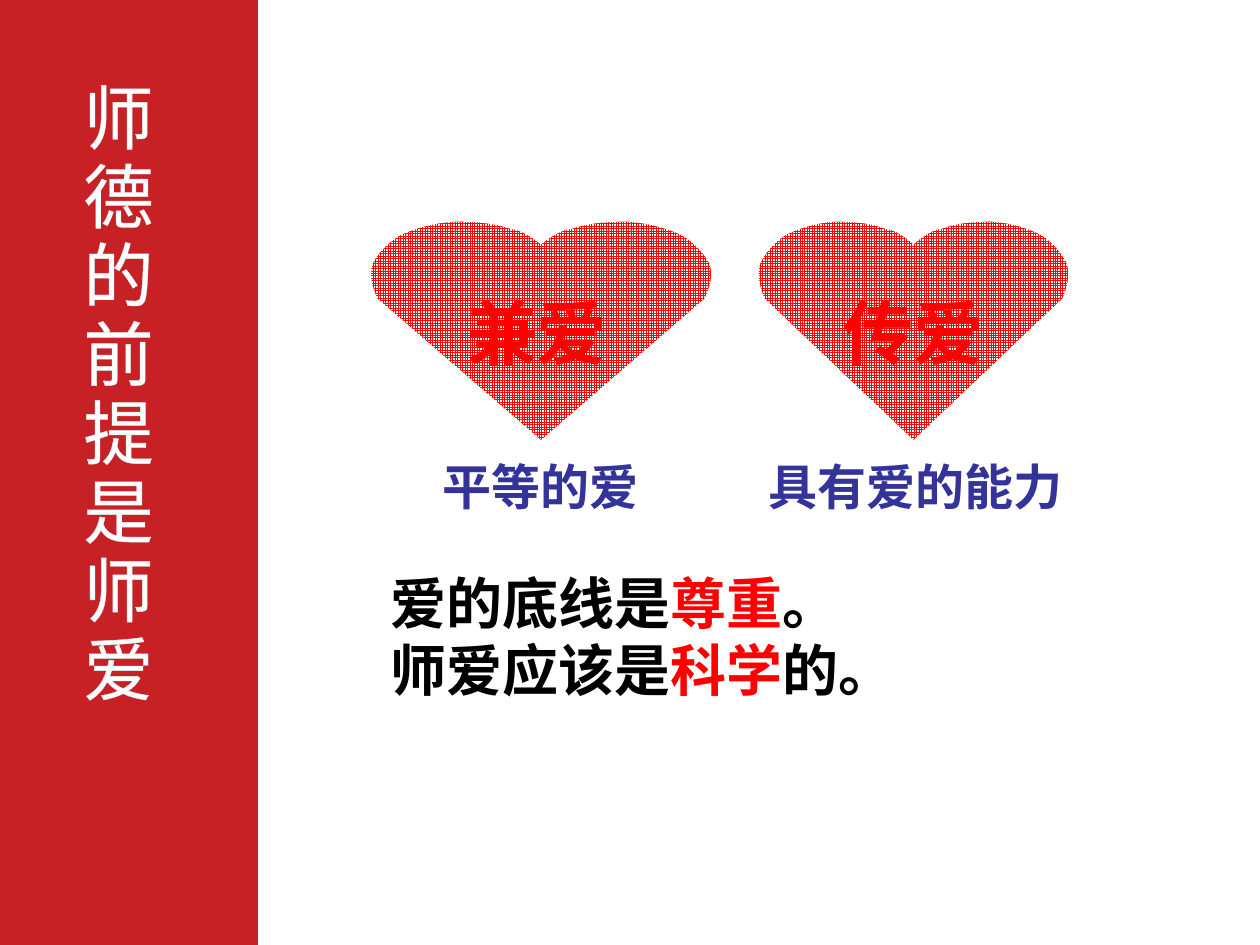
from collections import namedtuple
from dataclasses import dataclass

from lxml import etree
from pptx import Presentation
from pptx.dml.color import RGBColor
from pptx.enum.dml import MSO_PATTERN
from pptx.enum.shapes import MSO_SHAPE
from pptx.enum.text import MSO_ANCHOR, MSO_AUTO_SIZE, PP_ALIGN
from pptx.oxml.ns import qn
from pptx.util import Pt

PX = 914400 / 126
Box = namedtuple("Box", "left top width height")


@dataclass(frozen=True)
class Theme:
    """Colours, fonts and type sizes of the slide."""
    band: RGBColor = RGBColor(0xC7, 0x20, 0x25)
    red: RGBColor = RGBColor(0xFF, 0x00, 0x00)
    blue: RGBColor = RGBColor(0x33, 0x33, 0x99)
    black: RGBColor = RGBColor(0x00, 0x00, 0x00)
    white: RGBColor = RGBColor(0xFF, 0xFF, 0xFF)
    title_edge: RGBColor = RGBColor(0xDA, 0xED, 0xEF)
    title_font: str = "Noto Sans CJK JP"
    body_font: str = "Arial"
    title_size: int = 40
    heart_size: int = 40
    caption_size: int = 28
    body_size: int = 32


THEME = Theme()
HEART_WIDTH, HEART_HEIGHT = 275, 175
NOTCH, TIP = (137.5, 18), (137.5, 175)
LOBE = [
    [(133, 14), (121, 6), (114, 6)],
    [(100, 1), (85, 0), (69, 0)],
    [(53, 1), (38, 5), (25, 11)],
    [(14, 18), (7, 26), (3, 34)],
    [(0, 44), (3, 53), (7, 62)],
]


def emu(box):
    """Turn a box in px into EMU lengths."""
    return [round(length * PX) for length in box]


def style(paragraph, size, color, font=THEME.body_font, bold=True):
    """Set the font shared by all runs of a paragraph."""
    paragraph.font.name = font
    paragraph.font.size = Pt(size)
    paragraph.font.bold = bold
    paragraph.font.color.rgb = color


def text_frame(slide, box, wrap=False):
    """Add a text box that grows with its text and return its frame."""
    frame = slide.shapes.add_textbox(*emu(box)).text_frame
    frame.word_wrap = wrap
    frame.auto_size = MSO_AUTO_SIZE.SHAPE_TO_FIT_TEXT
    return frame


def heart_segments():
    """Return the curves and lines from the notch round to the notch."""
    left = [NOTCH] + [point for curve in LOBE for point in curve]
    right = [(HEART_WIDTH - x, y) for x, y in reversed(left)]
    curves = [right[i:i + 3] for i in range(1, len(right), 3)]
    return LOBE + [[TIP], right[:1]] + curves


def bend(shape, segments, origin):
    """Turn the straight sides of a freeform into its cubic curves."""
    sides = list(shape._element.iter(qn("a:lnTo")))
    for side, points in zip(sides, segments):
        if len(points) == 3:
            side.clear()
            curve = etree.SubElement(side.getparent(), qn("a:cubicBezTo"))
            for x, y in points:
                etree.SubElement(curve, qn("a:pt"), x=str(round(x - origin[0])),
                                 y=str(round(y - origin[1])))
            side.getparent().replace(side, curve)


def add_title_band(slide, box):
    """Draw the red band with the stacked title."""
    band = slide.shapes.add_shape(MSO_SHAPE.RECTANGLE, *emu(box))
    band.shadow.inherit = False
    band.fill.solid()
    band.fill.fore_color.rgb = THEME.band
    band.line.fill.background()
    frame = text_frame(slide, Box(box.left + 66, box.top + 73, 105, 693))
    frame._txBody.bodyPr.set("vert", "wordArtVertRtl")
    title = frame.paragraphs[0]
    title.text = "师德的前提是师爱"
    title.alignment = PP_ALIGN.CENTER
    title.line_spacing = Pt(45)
    style(title, THEME.title_size, THEME.white, THEME.title_font, False)
    edge = etree.SubElement(title.runs[0]._r.get_or_add_rPr(), qn("a:ln"), w=str(Pt(0.8)))
    fill = etree.SubElement(edge, qn("a:solidFill"))
    etree.SubElement(fill, qn("a:srgbClr"), val=str(THEME.title_edge))


def add_heart(slide, box, word, shift=0):
    """Draw a grid-patterned heart with a word, shifted left by some px."""
    left, top, width, height = emu(box)
    segments = [[(round(left + x * width / HEART_WIDTH),
                  round(top + y * height / HEART_HEIGHT)) for x, y in points]
                for points in heart_segments()]
    builder = slide.shapes.build_freeform(*segments[-1][-1])
    builder.add_line_segments([points[-1] for points in segments], close=True)
    heart = builder.convert_to_shape()
    bend(heart, segments, (heart.left, heart.top))
    heart.shadow.inherit = False
    heart.fill.patterned()
    heart.fill.pattern = MSO_PATTERN.SMALL_GRID
    heart.fill.fore_color.rgb = THEME.red
    heart.fill.back_color.rgb = THEME.white
    heart.line.color.rgb = THEME.white
    heart.line.width = Pt(0.75)
    frame = heart.text_frame
    frame.word_wrap = False
    frame.vertical_anchor = MSO_ANCHOR.MIDDLE
    frame.margin_right += round(2 * shift * PX)
    label = frame.paragraphs[0]
    label.text = word
    label.alignment = PP_ALIGN.CENTER
    style(label, THEME.heart_size, THEME.red)


def add_caption(slide, box, words):
    """Write the blue caption below a heart."""
    caption = text_frame(slide, box).paragraphs[0]
    caption.text = words
    caption.line_spacing = 0.8
    style(caption, THEME.caption_size, THEME.blue)


def add_conclusion(slide, box, lines):
    """Write the closing lines, each with its key word in red."""
    frame = text_frame(slide, box, wrap=True)
    for index, (before, key_word, after) in enumerate(lines):
        line = frame.add_paragraph() if index else frame.paragraphs[0]
        style(line, THEME.body_size, THEME.black)
        for words in (before, key_word, after):
            run = line.add_run()
            run.text = words
            if words == key_word:
                run.font.color.rgb = THEME.red


def main():
    """Build the slide and save it."""
    deck = Presentation()
    deck.slide_width, deck.slide_height = emu((1260, 945))
    slide = deck.slides.add_slide(deck.slide_layouts[6])
    add_title_band(slide, Box(0, 0, 258, 945))
    add_heart(slide, Box(368, 221, 346, 220), "兼爱", shift=4)
    add_heart(slide, Box(756, 221, 315, 220), "传爱")
    add_caption(slide, Box(430, 462, 223, 62), "平等的爱")
    add_caption(slide, Box(756, 462, 323, 62), "具有爱的能力")
    add_conclusion(slide, Box(378, 562, 567, 149), [
        ("爱的底线是", "尊重", "。"),
        ("师爱应该是", "科学", "的。"),
    ])
    deck.save("out.pptx")


if __name__ == "__main__":
    main()
